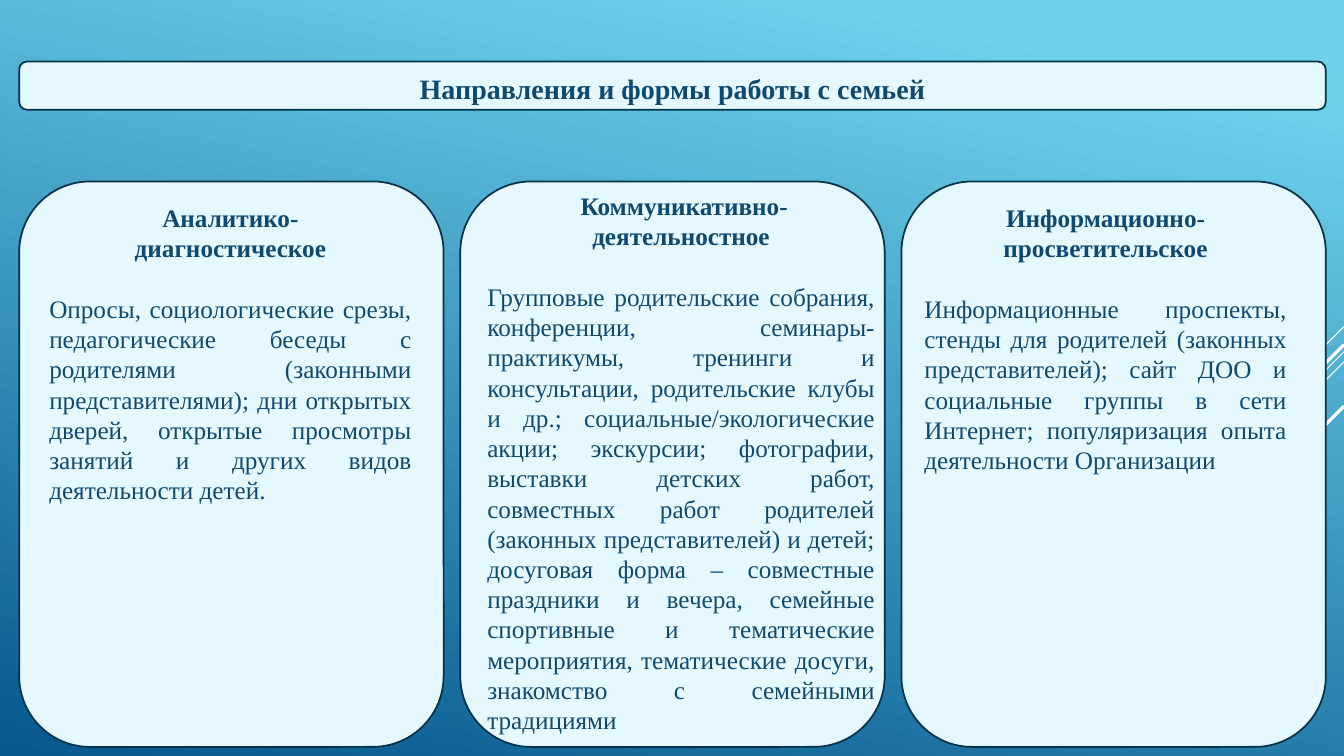
import lxml.etree
import pptx
import pptx.dml.color
import pptx.enum.shapes
import pptx.enum.text
import pptx.oxml.ns
import pptx.util

IN = pptx.util.Inches
PT = pptx.util.Pt
ALIGN = pptx.enum.text.PP_ALIGN
W, H = 13.33, 7.5
MARGIN, GAP = 0.19, 0.165
FULL = 12.96
COL = (FULL - 2 * GAP) / 3
CARD_TOP, CARD_H = 1.8, 5.61

RAYS = [(3.24, 1, 0.75), (3.49, 3.26, 0.75), (3.59, 2.07, 0.75),
        (3.42, 1.91, 2.25), (4.03, 1.39, 2.25)]

CARDS = [
    (["Аналитико-", "диагностическое"],
     "Опросы, социологические срезы, педагогические беседы с родителями "
     "(законными представителями); дни открытых дверей, открытые просмотры "
     "занятий и других видов деятельности детей.",
     (0.2, 0.16, 3.79, 3.43)),
    ([" Коммуникативно-деятельностное"],
     "Групповые родительские собрания, конференции, семинары-практикумы, "
     "тренинги и консультации, родительские клубы и др.; "
     "социальные/экологические акции; экскурсии; фотографии, выставки детских "
     "работ, совместных работ родителей (законных представителей) и детей; "
     "досуговая форма – совместные праздники и вечера, семейные спортивные и "
     "тематические мероприятия, тематические досуги, знакомство с семейными "
     "традициями",
     (0.17, 0.04, 4.04, 5.86)),
    (["Информационно-просветительское"],
     "Информационные проспекты, стенды для родителей (законных "
     "представителей); сайт ДОО и социальные группы в сети Интернет; "
     "популяризация опыта деятельности Организации",
     (0.13, 0.16, 3.79, 3.13)),
]


def rgb(value):
    return pptx.dml.color.RGBColor.from_string(value)


class Deck:
    """Holds the style and the current slide."""

    font, ink, panel_fill, edge = "Times New Roman", "0F496F", "E4F8FD", "043148"

    def __init__(self, prs):
        self.s = prs.slides.add_slide(prs.slide_layouts[5])

    def background(self, start, end, angle):
        fill = self.s.background.fill
        fill.gradient()
        fill.gradient_angle = 360 - angle
        for stop, (pos, color) in zip(fill.gradient_stops, (start, end)):
            stop.position = pos
            stop.color.rgb = rgb(color)

    def ray(self, top, length, width):
        ln = self.s.shapes.add_connector(
            pptx.enum.shapes.MSO_CONNECTOR.STRAIGHT,
            IN(W), IN(top), IN(W - length), IN(top + length))
        ln.line.color.rgb = rgb("FFFFFF")
        ln.line.width = PT(width)
        lxml.etree.SubElement(ln._element.spPr, pptx.oxml.ns.qn("a:effectLst"))

    def panel(self, x, y, w, h):
        sp = self.s.shapes.add_shape(
            pptx.enum.shapes.MSO_SHAPE.ROUNDED_RECTANGLE, IN(x), IN(y), IN(w), IN(h))
        sp.shadow.inherit = False
        sp.fill.solid()
        sp.fill.fore_color.rgb = rgb(self.panel_fill)
        sp.line.color.rgb = rgb(self.edge)
        sp.line.width = PT(1.25)

    def frame(self, sp):
        tf = sp.text_frame
        tf.word_wrap = True
        tf.auto_size = pptx.enum.text.MSO_AUTO_SIZE.SHAPE_TO_FIT_TEXT
        tf.vertical_anchor = pptx.enum.text.MSO_ANCHOR.TOP
        return tf

    def paragraph(self, p, text, size, align, bold):
        p.alignment = align
        p.line_spacing = PT(size * 1.2)
        r = p.add_run()
        r.text = text
        r.font.name, r.font.size, r.font.bold = self.font, PT(size), bold
        r.font.color.rgb = rgb(self.ink)

    def title(self, text, x, y, w, h):
        sp = self.s.shapes.title
        sp.left, sp.top, sp.width, sp.height = IN(x), IN(y), IN(w), IN(h)
        self.s.shapes._spTree.append(sp._element)
        self.paragraph(self.frame(sp).paragraphs[0], text, 20, ALIGN.CENTER, True)

    def card_text(self, heading, body, x, y, w, h):
        tf = self.frame(self.s.shapes.add_textbox(IN(x), IN(y), IN(w), IN(h)))
        p = tf.paragraphs[0]
        for line in heading:
            self.paragraph(p, line, 18, ALIGN.CENTER, True)
            last, p = p, tf.add_paragraph()
        last.space_after = PT(21.6)
        self.paragraph(p, body, 18, ALIGN.JUSTIFY, False)


def main():
    prs = pptx.Presentation()
    prs.slide_width, prs.slide_height = IN(W), IN(H)
    deck = Deck(prs)
    deck.background((0.1, "6ED2EB"), (1, "06588E"), 102)
    for ray in RAYS:
        deck.ray(*ray)
    deck.panel(MARGIN, 0.61, FULL, 0.48)
    deck.title("Направления и формы работы с семьей", MARGIN, 0.66, FULL, 0.44)
    lefts = [MARGIN + i * (COL + GAP) for i in range(len(CARDS))]
    for left in lefts:
        deck.panel(left, CARD_TOP, COL, CARD_H)
    for left, (heading, body, (dx, dy, w, h)) in zip(lefts, CARDS):
        deck.card_text(heading, body, left + dx, CARD_TOP + dy, w, h)
    prs.save("out.pptx")


if __name__ == "__main__":
    main()
